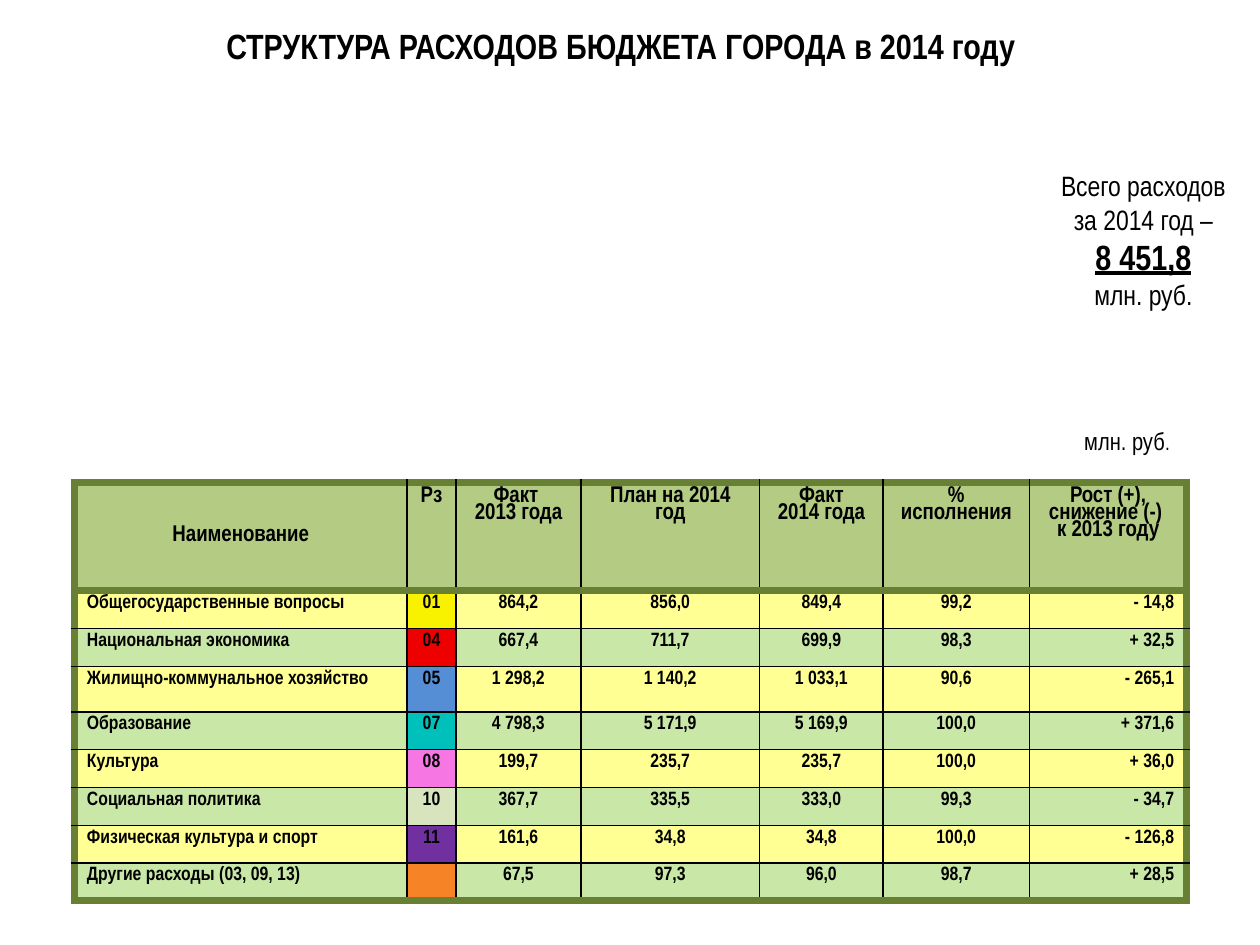
"""Build the slide on the structure of city budget expenses in 2014."""
from lxml.etree import SubElement
from pptx import Presentation
from pptx.dml.color import RGBColor
from pptx.enum.text import MSO_ANCHOR, PP_ALIGN
from pptx.oxml.ns import qn
from pptx.util import Inches, Pt

FONT = "Arial Narrow"
BLACK = RGBColor(0x00, 0x00, 0x00)
FRAME = RGBColor(0x67, 0x80, 0x34)
HEADER = RGBColor(0xB3, 0xCB, 0x83)
YELLOW = RGBColor(0xFF, 0xFF, 0x93)
GREEN = RGBColor(0xC9, 0xE7, 0xA7)
SECTION_COLORS = [
    RGBColor(0xF8, 0xF2, 0x00),
    RGBColor(0xEE, 0x00, 0x00),
    RGBColor(0x55, 0x8E, 0xD5),
    RGBColor(0x00, 0xC0, 0xBB),
    RGBColor(0xF6, 0x76, 0xE4),
    RGBColor(0xD7, 0xE4, 0xBD),
    RGBColor(0x70, 0x30, 0xA0),
    RGBColor(0xF6, 0x84, 0x26),
]

TEXT_BOXES = [
    ((0.43, 0.21, 9.06, 0.31), 0.05,
     [[("СТРУКТУРА РАСХОДОВ БЮДЖЕТА ГОРОДА в 2014 году ", 20, True, False)]]),
    ((8.46, 3.38, 0.97, 0.24), 0.05,
     [[("млн. руб", 14, False, False), (".", 12, False, False)]]),
    ((8.26, 0.92, 1.63, 2.2), 0.28,
     [[("Всего расходов за 2014 год –", 16, False, False)],
      [("8 451,8", 20, True, True)],
      [("млн. руб.", 16, False, False)]]),
]

COLUMN_WIDTHS = [2.64, 0.39, 0.99, 1.42, 0.98, 1.16, 1.25]
ROW_HEIGHTS = [0.86, 0.3, 0.3, 0.36, 0.3, 0.3, 0.3, 0.3, 0.3]
ROWS = [
    ["Наименование", "Рз", "Факт \n2013 года", "План на 2014 год",
     "Факт\n 2014 года ", "% исполнения",
     "Рост (+),\nснижение (-) \nк 2013 году"],
    ["Общегосударственные вопросы", "01", "864,2", "856,0", "849,4", "99,2", "- 14,8"],
    ["Национальная экономика", "04", "667,4", "711,7", "699,9", "98,3", "+ 32,5"],
    ["Жилищно-коммунальное хозяйство", "05", "1 298,2", "1 140,2", "1 033,1", "90,6", "- 265,1"],
    ["Образование", "07", "4 798,3", "5 171,9", "5 169,9", "100,0", "+ 371,6"],
    ["Культура", "08", "199,7", "235,7", "235,7", "100,0", "+ 36,0"],
    ["Социальная политика", "10", "367,7", "335,5", "333,0", "99,3", "- 34,7"],
    ["Физическая культура и спорт", "11", "161,6", "34,8", "34,8", "100,0", "- 126,8"],
    ["Другие расходы (03, 09, 13)", "", "67,5", "97,3", "96,0", "98,7", "+ 28,5"],
]


def add_span(para, text, size, bold, underline=False):
    span = para.add_run()
    span.text = text
    span.font.name = FONT
    span.font.size = Pt(size)
    span.font.bold = bold
    span.font.underline = underline
    span.font.color.rgb = BLACK


def add_border(cell, side, thick):
    line = SubElement(cell._tc.get_or_add_tcPr(), qn(f"a:ln{side}"),
                      w=str(Pt(4.5 if thick else 1)))
    fill = SubElement(line, qn("a:solidFill"))
    SubElement(fill, qn("a:srgbClr"), val=str(FRAME if thick else BLACK))


deck = Presentation()
deck.slide_width = Inches(10)
deck.slide_height = Inches(7.5)
page = deck.slides.add_slide(deck.slide_layouts[6])

for place, bottom, paragraphs in TEXT_BOXES:
    box = page.shapes.add_textbox(*[Inches(length) for length in place])
    frame = box.text_frame
    frame.word_wrap = True
    frame.vertical_anchor = MSO_ANCHOR.MIDDLE
    frame.margin_bottom = Inches(bottom)
    for index, spans in enumerate(paragraphs):
        para = frame.add_paragraph() if index else frame.paragraphs[0]
        para.alignment = PP_ALIGN.CENTER
        for span_values in spans:
            add_span(para, *span_values)

last_row = len(ROWS) - 1
last_column = len(COLUMN_WIDTHS) - 1
table = page.shapes.add_table(
    len(ROWS), len(COLUMN_WIDTHS), Inches(0.59), Inches(3.83),
    Inches(sum(COLUMN_WIDTHS)), Inches(sum(ROW_HEIGHTS))).table
table.first_row = False
table.horz_banding = False
for column, width in zip(table.columns, COLUMN_WIDTHS):
    column.width = Inches(width)
for row, height in zip(table.rows, ROW_HEIGHTS):
    row.height = Inches(height)

for r, texts in enumerate(ROWS):
    for c, text in enumerate(texts):
        cell = table.cell(r, c)
        add_border(cell, "L", c == 0)
        add_border(cell, "R", c == last_column)
        add_border(cell, "T", r <= 1)
        add_border(cell, "B", r in (0, last_row))
        cell.fill.solid()
        if r == 0:
            cell.fill.fore_color.rgb = HEADER
        elif c == 1:
            cell.fill.fore_color.rgb = SECTION_COLORS[r - 1]
        else:
            cell.fill.fore_color.rgb = YELLOW if r % 2 else GREEN

        if r == 0 and c == 0:
            cell.vertical_anchor = MSO_ANCHOR.MIDDLE
        if not text:
            cell.margin_top = cell.margin_bottom = 0
        alignment = PP_ALIGN.CENTER
        if r and c == 0:
            alignment = PP_ALIGN.LEFT
        elif r and c == last_column:
            alignment = PP_ALIGN.RIGHT
        for index, line_text in enumerate(text.split("\n")):
            frame = cell.text_frame
            para = frame.add_paragraph() if index else frame.paragraphs[0]
            para.alignment = alignment
            para.line_spacing = 0.8
            if line_text:
                add_span(para, line_text, 11 if r else 13, True)

deck.save("out.pptx")
